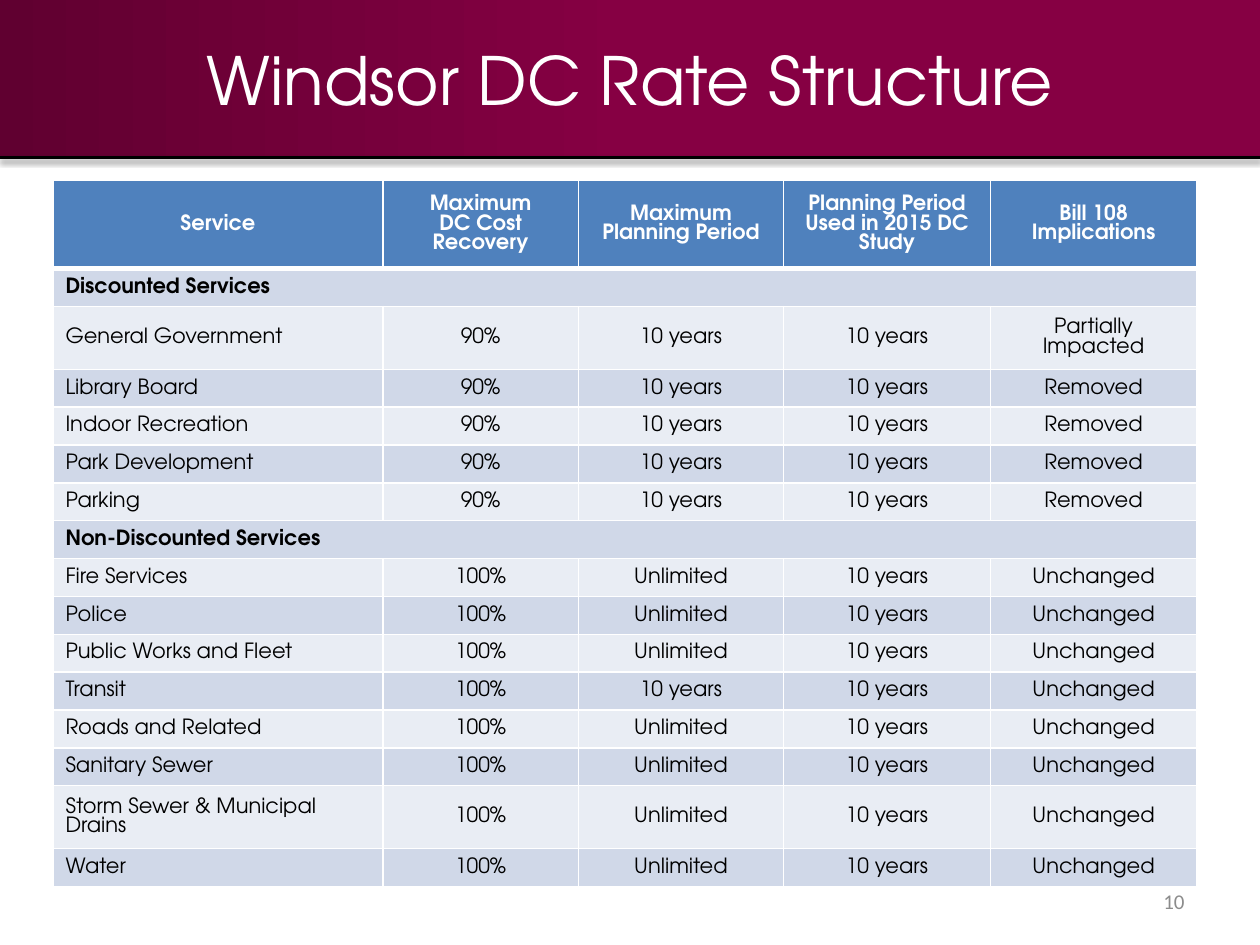
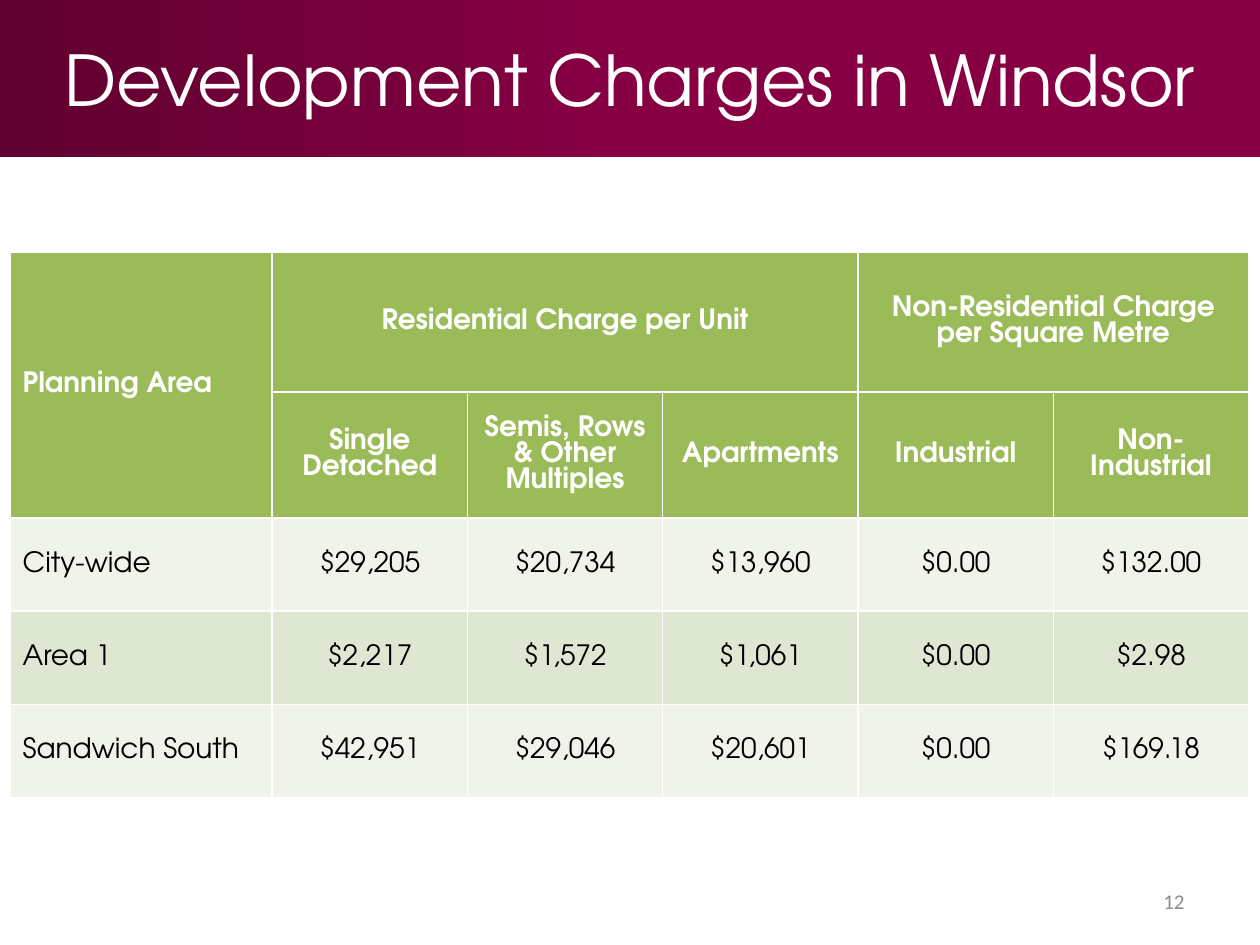
import pptx
import pptx.dml.color
import pptx.enum.shapes
import pptx.enum.text
import pptx.oxml
import pptx.oxml.ns
import pptx.util
from pptx.util import Inches

TITLE_FONT = "TeX Gyre Adventor"
NUMBER_FONT = "Calibri"
WHITE, BLACK, GREY = "FFFFFF", "000000", "8C8C8C"
BAND_EDGE, BAND_CENTRE = "600030", "860043"
BLUE_HEAD, BLUE_DARK, BLUE_LIGHT = "4F81BD", "D0D8E8", "E9EDF4"
GREEN_HEAD, GREEN_DARK, GREEN_LIGHT = "9BBB59", "DEE7D1", "EFF3EA"
BAND_HEIGHT = 1.25

LEFT = pptx.enum.text.PP_ALIGN.LEFT
CENTER = pptx.enum.text.PP_ALIGN.CENTER
RIGHT = pptx.enum.text.PP_ALIGN.RIGHT
MIDDLE = pptx.enum.text.MSO_ANCHOR.MIDDLE

RATE_HEADINGS = ["Service", "Maximum\nDC Cost Recovery", "Maximum\nPlanning Period",
                 "Planning Period Used in 2015 DC Study", "Bill 108 Implications"]
DISCOUNTED = [("General Government", "Partially Impacted"), ("Library Board", "Removed"),
              ("Indoor Recreation", "Removed"), ("Park Development", "Removed"),
              ("Parking", "Removed")]
NON_DISCOUNTED = ["Fire Services", "Police", "Public Works and Fleet", "Transit",
                  "Roads and Related", "Sanitary Sewer",
                  "Storm Sewer & Municipal Drains", "Water"]
TALL_SERVICES = {"General Government", "Storm Sewer & Municipal Drains"}

CHARGE_ROWS = [
    ["Planning Area", "Residential Charge per Unit", "", "",
     "Non-Residential Charge per Square Metre", ""],
    ["", "Single Detached", "Semis, Rows & Other Multiples", "Apartments",
     "Industrial", "Non-Industrial"],
    ["City-wide", "$29,205", "$20,734", "$13,960", "$0.00", "$132.00"],
    ["Area 1", "$2,217", "$1,572", "$1,061", "$0.00", "$2.98"],
    ["Sandwich South", "$42,951", "$29,046", "$20,601", "$0.00", "$169.18"],
]


def rgb(hex_code):
    return pptx.dml.color.RGBColor.from_string(hex_code)


def drawing_xml(body):
    """Parse one DrawingML element, declaring its namespace."""
    head, rest = body.split(">", 1)
    closed = "/" if head.endswith("/") else ""
    return pptx.oxml.parse_xml(
        f"{head.rstrip('/')} {pptx.oxml.ns.nsdecls('a')}{closed}>{rest}")


def write_text(frame, text, size, color, align, font=TITLE_FONT, bold=False):
    """Fill a text frame, one paragraph per line of text."""
    frame.word_wrap = True
    for index, line in enumerate(text.split("\n")):
        para = frame.add_paragraph() if index else frame.paragraphs[0]
        para.alignment = align
        span = para.add_run()
        span.text = line
        span.font.name = font
        span.font.size = pptx.util.Pt(size)
        span.font.bold = bold
        span.font.color.rgb = rgb(color)


def add_text(slide, left, top, width, height, text, *style):
    box = slide.shapes.add_textbox(Inches(left), Inches(top), Inches(width), Inches(height))
    box.text_frame.vertical_anchor = MIDDLE
    write_text(box.text_frame, text, *style)


def add_band(slide):
    band = slide.shapes.add_shape(pptx.enum.shapes.MSO_SHAPE.RECTANGLE, 0, 0,
                                  Inches(10), Inches(BAND_HEIGHT))
    band.shadow.inherit = False
    band.line.fill.background()
    band.fill.gradient()
    band.fill.gradient_angle = 0
    stops = band.fill.gradient_stops
    for stop in stops:
        stop.color.rgb = rgb(BAND_EDGE)
        stop.position = 1 if stop is stops[-1] else 0
    stop_list = band.element.spPr.find(".//" + pptx.oxml.ns.qn("a:gsLst"))
    stop_list.insert(1, drawing_xml(
        f'<a:gs pos="50000"><a:srgbClr val="{BAND_CENTRE}"/></a:gs>'))


def add_band_rule(slide):
    """Draw the shadowed black line under the title band."""
    rule = slide.shapes.add_connector(pptx.enum.shapes.MSO_CONNECTOR.STRAIGHT,
                                      0, Inches(BAND_HEIGHT), Inches(10), Inches(BAND_HEIGHT))
    rule.line.color.rgb = rgb(BLACK)
    rule.line.width = pptx.util.Pt(2)
    blur, distance = pptx.util.Pt(3.1), pptx.util.Pt(1.6)
    rule.element.spPr.append(drawing_xml(
        f'<a:effectLst><a:outerShdw blurRad="{blur}" dist="{distance}" dir="5400000" '
        f'rotWithShape="0"><a:srgbClr val="{BLACK}"><a:alpha val="38000"/></a:srgbClr>'
        '</a:outerShdw></a:effectLst>'))


def add_titled_slide(deck, title, title_size, number):
    slide = deck.slides.add_slide(deck.slide_layouts[6])
    add_band(slide)
    add_text(slide, 0, 0, 10, BAND_HEIGHT, title, title_size, WHITE, CENTER)
    add_text(slide, 7.17, 6.95, 2.33, 0.4, number, 12, GREY, RIGHT, NUMBER_FONT)
    return slide


def set_borders(cell, bottom_width=1):
    """Put white lines on all four sides of a cell; its fill must be set already."""
    properties = cell._tc.get_or_add_tcPr()
    for index, side in enumerate("LRTB"):
        width = pptx.util.Pt(bottom_width if side == "B" else 1)
        properties.insert(index, drawing_xml(
            f'<a:ln{side} w="{width}"><a:solidFill><a:srgbClr val="{WHITE}"/>'
            f'</a:solidFill></a:ln{side}>'))


def add_grid(slide, left, top, widths, heights):
    frame = slide.shapes.add_table(len(heights), len(widths), Inches(left), Inches(top),
                                   Inches(sum(widths)), Inches(sum(heights)))
    table = frame.table
    table.first_row = table.horz_banding = False
    for column, width in zip(table.columns, widths):
        column.width = Inches(width)
    for row, height in zip(table.rows, heights):
        row.height = Inches(height)
    return table


def fill_cell(cell, text, size, fill, color, align, bold, bottom_width=1):
    cell.fill.solid()
    cell.fill.fore_color.rgb = rgb(fill)
    set_borders(cell, bottom_width)
    cell.vertical_anchor = MIDDLE
    if text:
        write_text(cell.text_frame, text, size, color, align, bold=bold)


def rate_rows():
    rows = [RATE_HEADINGS, ["Discounted Services"]]
    rows += [[name, "90%", "10 years", "10 years", impact] for name, impact in DISCOUNTED]
    rows.append(["Non-Discounted Services"])
    for name in NON_DISCOUNTED:
        longest = "10 years" if name == "Transit" else "Unlimited"
        rows.append([name, "100%", longest, "10 years", "Unchanged"])
    return rows


def add_rate_table(slide):
    rows = rate_rows()
    heights = [0.68] + [0.48 if row[0] in TALL_SERVICES else 0.29 for row in rows[1:]]
    table = add_grid(slide, 0.42, 1.43, [2.62, 1.55, 1.63, 1.64, 1.64], heights)
    for r, row in enumerate(rows):
        heading, section = r == 0, len(row) == 1
        fill = BLUE_HEAD if heading else BLUE_DARK if r % 2 else BLUE_LIGHT
        if section:
            table.cell(r, 0).merge(table.cell(r, 4))
            row = row + [""] * 4
        for c, text in enumerate(row):
            fill_cell(table.cell(r, c), text, 12, fill, WHITE if heading else BLACK,
                      CENTER if heading or c else LEFT, heading or section,
                      3 if heading else 1)


def add_charge_table(slide):
    table = add_grid(slide, 0.08, 2, [2.08] + [1.55] * 5, [1.11, 1] + [0.74] * 3)
    for first, last in [((0, 0), (1, 0)), ((0, 1), (0, 3)), ((0, 4), (0, 5))]:
        table.cell(*first).merge(table.cell(*last))
    for r, row in enumerate(CHARGE_ROWS):
        heading = r < 2
        fill = GREEN_HEAD if heading else GREEN_DARK if r % 2 else GREEN_LIGHT
        for c, text in enumerate(row):
            fill_cell(table.cell(r, c), text, 16, fill, WHITE if heading else BLACK,
                      CENTER if c else LEFT, heading)


def main():
    deck = pptx.Presentation()
    deck.slide_width, deck.slide_height = Inches(10), Inches(7.5)

    rates = add_titled_slide(deck, "Windsor DC Rate Structure", 38, "10")
    add_band_rule(rates)
    add_rate_table(rates)

    charges = add_titled_slide(deck, "Development Charges in Windsor", 40, "12")
    add_charge_table(charges)

    deck.save("out.pptx")


if __name__ == "__main__":
    main()
